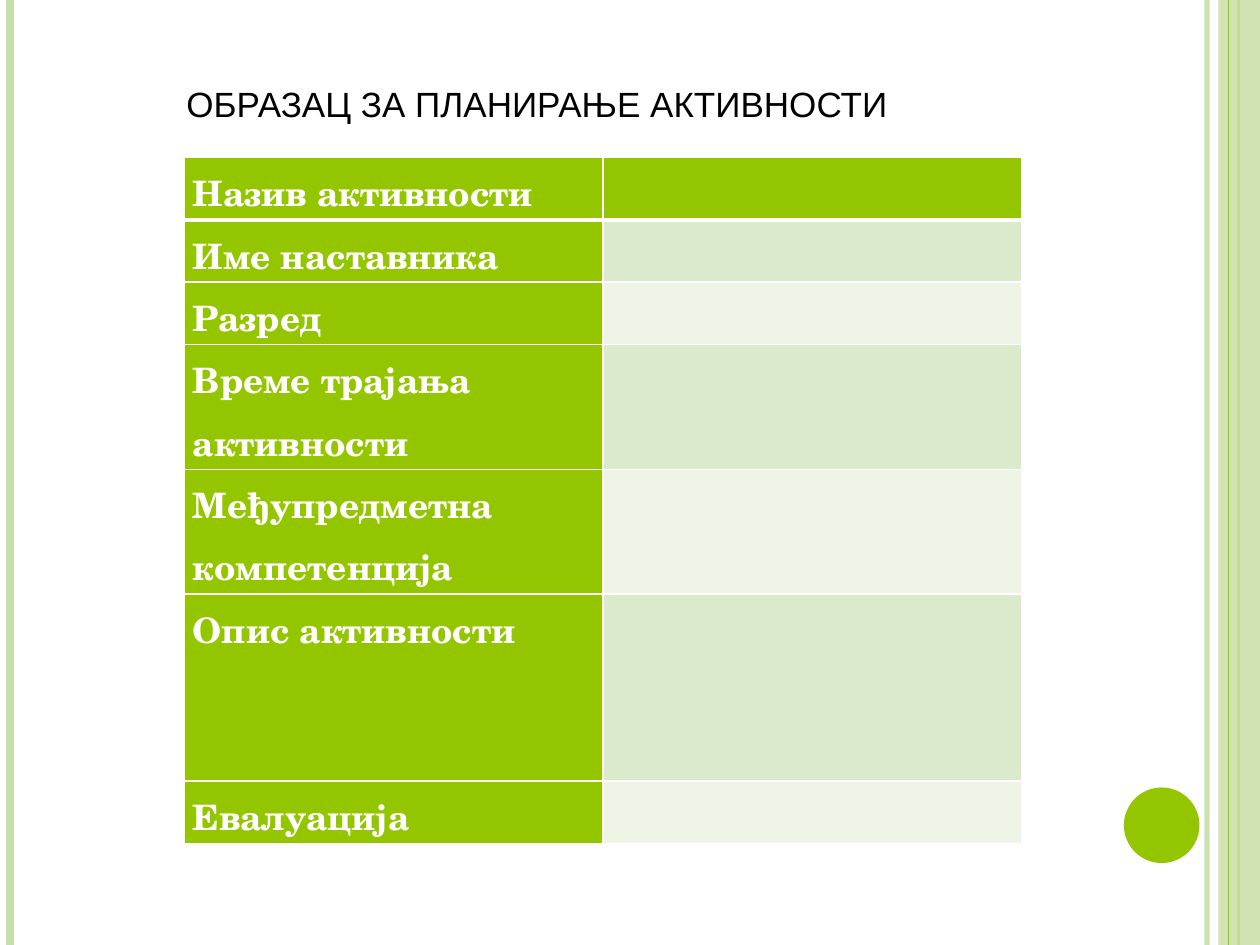
"""Build the activity planning form slide."""
from lxml import etree
from pptx import Presentation
from pptx import util as u
from pptx.dml.color import RGBColor
from pptx.enum import shapes, text
from pptx.oxml.ns import qn

TITLE = "ОБРАЗАЦ ЗА ПЛАНИРАЊЕ АКТИВНОСТИ"
FIELDS = [
    ("Назив активности", 1),
    ("Име наставника", 1),
    ("Разред", 1),
    ("Време трајања активности", 2),
    ("Међупредметна компетенција", 2),
    ("Опис активности", 3),
    ("Евалуација", 1),
]
COLORS = {
    "green": "94C600",
    "pale": "C8DFAB",
    "odd": "DCEACC",
    "even": "EEF5E7",
    "white": "FFFFFF",
    "black": "000000",
}
LEFT_STRIPES = [(9.58, "pale", 3, 93), (0.08, "pale", 4.5, 100), (9.83, "green", 1.5, 100)]
RIGHT_STRIPE = (9.75, "green", 0.75, 100)
LINE_HEIGHT = 0.495
COLUMN_WIDTH = 3.325


def set_fill(fill, color, opacity=100):
    fill.solid()
    fill.fore_color.rgb = RGBColor.from_string(COLORS[color])
    if opacity < 100:
        for element in fill._xPr.iter(qn("a:srgbClr")):
            etree.SubElement(element, qn("a:alpha"), val=str(opacity * 1000))


def write(frame, content, font="Arial", size=20, color="black", bold=False, spacing=1.0):
    paragraph = frame.paragraphs[0]
    paragraph.alignment = text.PP_ALIGN.LEFT
    paragraph.line_spacing = spacing
    run = paragraph.add_run()
    run.text = content
    run.font.name = font
    run.font.size = u.Pt(size)
    run.font.bold = bold
    run.font.color.rgb = RGBColor.from_string(COLORS[color])


def add_stripe(slide, x, color, width, opacity):
    stripe = slide.shapes.add_connector(
        shapes.MSO_CONNECTOR.STRAIGHT, u.Inches(x), 0, u.Inches(x), u.Inches(7.5))
    stripe.line.width = u.Pt(width)
    set_fill(stripe.line.fill, color, opacity)
    etree.SubElement(stripe._element.spPr, qn("a:effectLst"))


def add_plain(slide, kind, box, color, opacity=100):
    shape = slide.shapes.add_shape(kind, *map(u.Inches, box))
    shape.shadow.inherit = False
    set_fill(shape.fill, color, opacity)
    shape.line.fill.background()


def set_borders(cell, **widths):
    properties = cell._tc.get_or_add_tcPr()
    for index, (side, width) in enumerate(widths.items()):
        line = etree.Element(qn(f"a:ln{side}"), w=str(u.Pt(width)))
        fill = etree.SubElement(line, qn("a:solidFill"))
        etree.SubElement(fill, qn("a:srgbClr"), val=COLORS["white"])
        properties.insert(index, line)


def add_form(slide):
    height = LINE_HEIGHT * sum(lines for _, lines in FIELDS)
    table = slide.shapes.add_table(
        len(FIELDS), 2, u.Inches(1.46), u.Inches(1.25),
        u.Inches(2 * COLUMN_WIDTH), u.Inches(height)).table
    for row, (label, lines) in enumerate(FIELDS):
        table.rows[row].height = u.Inches(LINE_HEIGHT * lines)
        answer = "green" if row == 0 else ("even", "odd")[row % 2]
        for column, color in enumerate(("green", answer)):
            cell = table.cell(row, column)
            set_fill(cell.fill, color)
            set_borders(cell, L=1, R=1, T=3 if row == 1 else 1, B=3 if row == 0 else 1)
            cell.margin_left = cell.margin_right = u.Inches(0.07)
            cell.margin_top = cell.margin_bottom = 0
        write(table.cell(row, 0).text_frame, label, font="TeX Gyre Schola",
              color="white", bold=True, spacing=1.15)


def add_title(slide):
    title = slide.shapes.title
    title.left, title.top, title.width, title.height = map(u.Inches, (1.38, 0.69, 7, 0.5))
    frame = title.text_frame
    frame.auto_size = text.MSO_AUTO_SIZE.NONE
    frame.word_wrap = False
    frame.vertical_anchor = text.MSO_ANCHOR.MIDDLE
    frame.margin_top, frame.margin_bottom = 0, u.Inches(0.24)
    write(frame, TITLE)


def main():
    presentation = Presentation()
    presentation.slide_width, presentation.slide_height = u.Inches(10), u.Inches(7.5)
    slide = presentation.slides.add_slide(presentation.slide_layouts[5])
    set_fill(slide.background.fill, "white")
    for stripe in LEFT_STRIPES:
        add_stripe(slide, *stripe)
    add_plain(slide, shapes.MSO_SHAPE.RECTANGLE, (9.67, 0, 0.33, 7.5), "pale", 87)
    add_stripe(slide, *RIGHT_STRIPE)
    add_plain(slide, shapes.MSO_SHAPE.OVAL, (8.92, 6.25, 0.6, 0.6), "green")
    add_form(slide)
    add_title(slide)
    presentation.save("out.pptx")


if __name__ == "__main__":
    main()
